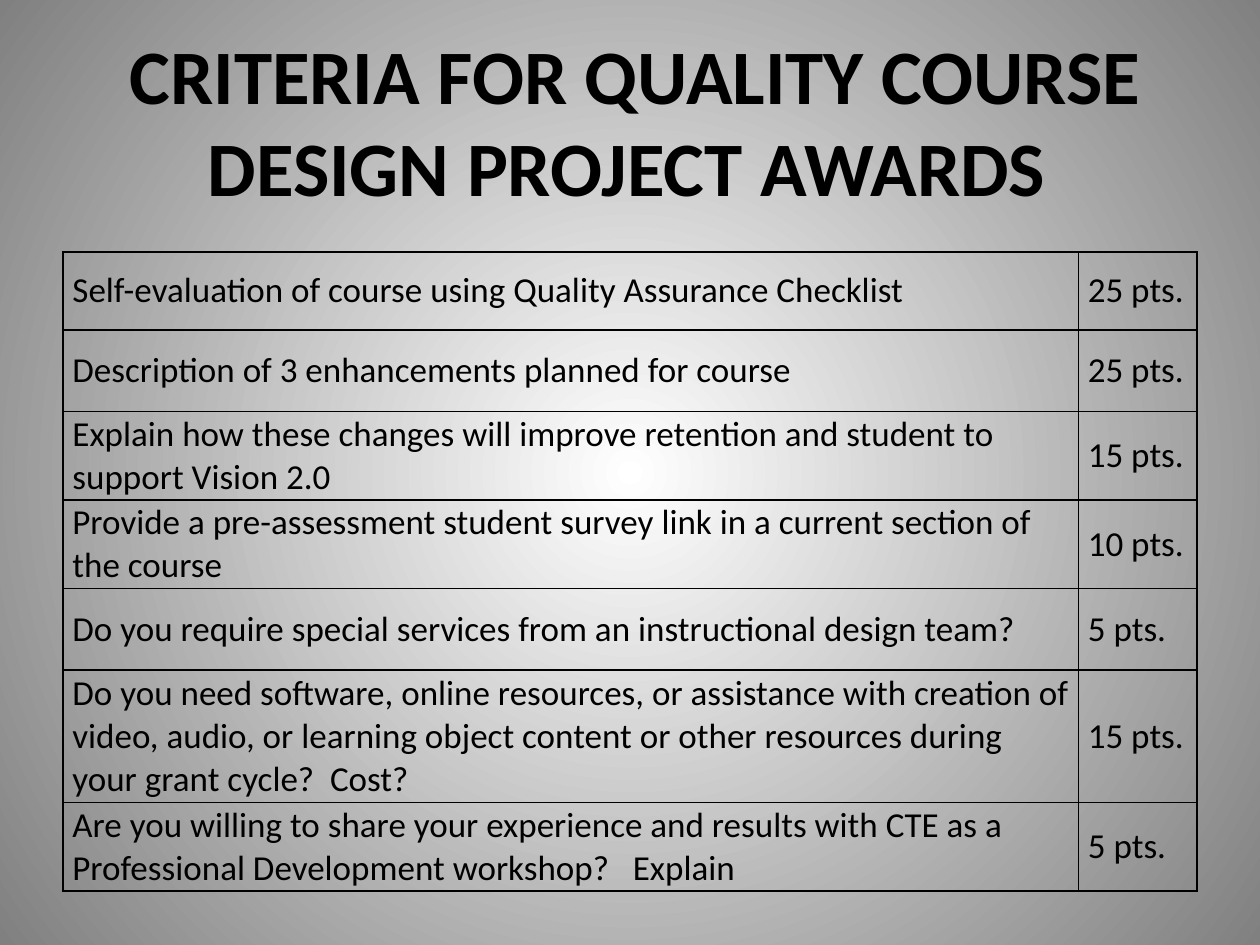
from lxml.etree import SubElement, fromstring
from pptx import Presentation
from pptx.dml.color import RGBColor
from pptx.enum.text import MSO_ANCHOR as Anchor, PP_ALIGN as Align
from pptx.oxml.ns import nsdecls, qn
from pptx.util import Cm, Pt

BLACK = "000000"
CRITERIA = [
    ("Self-evaluation of course using Quality Assurance Checklist", "25 pts.", 1.57),
    ("Description of 3 enhancements planned for course", "25 pts.", 1.65),
    ("Explain how these changes will improve retention and student to support Vision 2.0", "15 pts.", 1.78),
    ("Provide a pre-assessment student survey link in a current section of the course", "10 pts.", 1.78),
    ("Do you require special services from an instructional design team?", "5 pts.", 1.65),
    ("Do you need software, online resources, or assistance with creation of video, audio, "
     "or learning object content or other resources during your grant cycle?  Cost?", "15 pts.", 2.67),
    ("Are you willing to share your experience and results with CTE as a "
     "Professional Development workshop?   Explain", "5 pts.", 1.78),
]


def color(value):
    return RGBColor.from_string(value)


def write(frame, text, size, bold=False, align=Align.LEFT):
    frame.word_wrap = True
    para = frame.paragraphs[0]
    para.alignment = align
    span = para.add_run()
    span.text = text
    span.font.name = "Calibri"
    span.font.size = Pt(size)
    span.font.bold = bold
    span.font.color.rgb = color(BLACK)


def add_background(page, center, edge):
    fill = page.background.fill
    fill.gradient()
    for stop, value, position in zip(fill.gradient_stops, (center, edge), (0, 1)):
        stop.color.rgb = color(value)
        stop.position = position
    gradient = next(page.element.iter(qn("a:gradFill")))
    gradient.remove(gradient.find(qn("a:lin")))
    circle = SubElement(gradient, qn("a:path"), path="circle")
    SubElement(circle, qn("a:fillToRect"), l="50000", t="50000", r="50000", b="50000")


def add_title(page, left, top, width, height):
    box = page.shapes.add_textbox(Cm(left), Cm(top), Cm(width), Cm(height))
    write(box.text_frame, "CRITERIA FOR QUALITY COURSE DESIGN PROJECT AWARDS ", 44, True, Align.CENTER)


def add_borders(cell):
    properties = cell._tc.get_or_add_tcPr()
    for index, side in enumerate(("lnL", "lnR", "lnT", "lnB")):
        properties.insert(index, fromstring(
            f'<a:{side} {nsdecls("a")} w="{Pt(1)}"><a:solidFill>'
            f'<a:srgbClr val="{BLACK}"/></a:solidFill></a:{side}>'))


def add_criteria(page, left, top, width, points_width):
    height = sum(row_height for _, _, row_height in CRITERIA)
    table = page.shapes.add_table(
        len(CRITERIA), 2, Cm(left), Cm(top), Cm(width), Cm(height)).table
    table.first_row = table.horz_banding = False
    table.columns[0].width = Cm(width - points_width)
    table.columns[1].width = Cm(points_width)
    for row, (criterion, points, row_height) in zip(table.rows, CRITERIA):
        row.height = Cm(row_height)
        for cell, text in zip(row.cells, (criterion, points)):
            cell.fill.background()
            cell.vertical_anchor = Anchor.MIDDLE
            cell.margin_left = cell.margin_right = Cm(0.19)
            cell.margin_top = cell.margin_bottom = 0
            write(cell.text_frame, text, 20)
            add_borders(cell)


def main():
    deck = Presentation()
    deck.slide_width, deck.slide_height = Cm(25.4), Cm(19.05)
    page = deck.slides.add_slide(deck.slide_layouts[6])
    add_background(page, "FFFFFF", "808080")
    add_criteria(page, 1.27, 5.08, 22.86, 2.39)
    add_title(page, 0.43, 0.43, 24.77, 3.81)
    deck.save("out.pptx")


if __name__ == "__main__":
    main()
